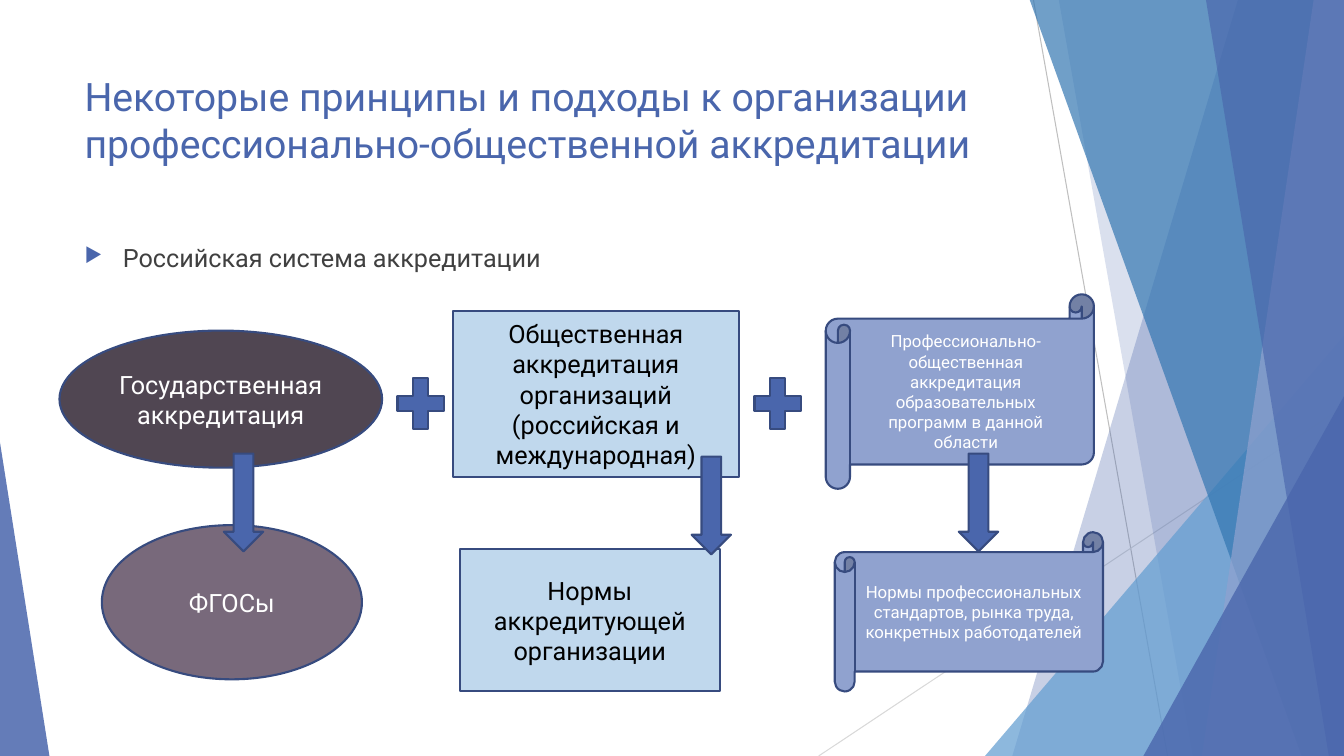
import pptx
import pptx.dml.color
import pptx.enum.shapes
import pptx.enum.text
import pptx.oxml.ns
import pptx.util
from lxml import etree

Inches = pptx.util.Inches
RGBColor = pptx.dml.color.RGBColor
Shape = pptx.enum.shapes.MSO_SHAPE
Align = pptx.enum.text.PP_ALIGN
Anchor = pptx.enum.text.MSO_ANCHOR
qn = pptx.oxml.ns.qn

WIDTH, HEIGHT = 13.33, 7.5
BLUE = RGBColor(0x4A, 0x66, 0xAC)
NAVY = RGBColor(0x37, 0x4B, 0x7F)
SKY = RGBColor(0x62, 0x9D, 0xD1)
TEAL = RGBColor(0x34, 0x77, 0xB2)
PERIWINKLE = RGBColor(0x90, 0xA2, 0xCF)
PALE_BLUE = RGBColor(0xC0, 0xD8, 0xED)
DARK_PLUM = RGBColor(0x50, 0x46, 0x52)
PLUM = RGBColor(0x78, 0x69, 0x7B)
GRAY = RGBColor(0xBF, 0xBF, 0xBF)
LIGHT_GRAY = RGBColor(0xD9, 0xD9, 0xD9)
TEXT_GRAY = RGBColor(0x40, 0x40, 0x40)
BLACK = RGBColor(0, 0, 0)
WHITE = RGBColor(0xFF, 0xFF, 0xFF)


class SlideBuilder:
    font = "Roboto"
    outline = NAVY
    outline_width = 1.5

    def __init__(self, slide):
        self.slide = slide
        self.shapes = slide.shapes

    def line(self, start, end, color):
        connector = self.shapes.add_connector(
            pptx.enum.shapes.MSO_CONNECTOR.STRAIGHT,
            *(Inches(value) for value in start + end))
        connector.line.color.rgb = color
        connector.line.width = pptx.util.Pt(0.75)
        etree.SubElement(connector._element.spPr, qn("a:effectLst"))

    def paint_facet(self, shape, color, opacity):
        shape.shadow.inherit = False
        shape.fill.solid()
        shape.fill.fore_color.rgb = color
        shape.line.fill.background()
        rgb = shape._element.spPr.find(qn("a:solidFill")).find(qn("a:srgbClr"))
        etree.SubElement(rgb, qn("a:alpha"), val=str(opacity * 1000))

    def band(self, top_x, bottom_x, color, opacity):
        """Facet between a slanted edge and the right side of the slide."""
        corners = [(top_x, -0.01), (WIDTH, -0.01), (WIDTH, HEIGHT), (bottom_x, HEIGHT)]
        points = [(Inches(x), Inches(y)) for x, y in corners]
        builder = self.shapes.build_freeform(*points[0])
        builder.add_line_segments(points[1:], close=True)
        self.paint_facet(builder.convert_to_shape(), color, opacity)

    def triangle(self, left, top, width, apex, color, opacity):
        """Facet standing on the bottom edge of the slide."""
        shape = self.shapes.add_shape(
            Shape.ISOSCELES_TRIANGLE, Inches(left), Inches(top),
            Inches(width), Inches(HEIGHT - top))
        shape.adjustments[0] = apex
        self.paint_facet(shape, color, opacity)

    def format_text(self, paragraph, size, color):
        for run in paragraph.runs:
            run.font.name = self.font
            run.font.size = pptx.util.Pt(size)
            run.font.color.rgb = color

    def text(self, box, text, size, color):
        shape = self.shapes.add_textbox(*(Inches(value) for value in box))
        shape.text_frame.word_wrap = True
        shape.text_frame.text = text
        paragraph = shape.text_frame.paragraphs[0]
        self.format_text(paragraph, size, color)
        return paragraph

    def bullet(self, box, text, size, color):
        paragraph = self.text(box, text, size, color)
        paragraph.space_before = pptx.util.Pt(10)
        properties = paragraph._p.get_or_add_pPr()
        properties.set("marL", str(Inches(0.38)))
        properties.set("indent", str(-Inches(0.38)))
        bullet_color = etree.SubElement(properties, qn("a:buClr"))
        etree.SubElement(bullet_color, qn("a:srgbClr"), val=str(BLUE))
        etree.SubElement(properties, qn("a:buSzPct"), val="80000")
        etree.SubElement(properties, qn("a:buChar"), char="▶")

    def figure(self, kind, box, fill):
        shape = self.shapes.add_shape(kind, *(Inches(value) for value in box))
        shape.shadow.inherit = False
        shape.fill.solid()
        shape.fill.fore_color.rgb = fill
        shape.line.color.rgb = self.outline
        shape.line.width = pptx.util.Pt(self.outline_width)
        return shape

    def block(self, kind, box, fill, text, size, color):
        text_frame = self.figure(kind, box, fill).text_frame
        text_frame.word_wrap = True
        text_frame.vertical_anchor = Anchor.MIDDLE
        text_frame.text = text
        paragraph = text_frame.paragraphs[0]
        paragraph.alignment = Align.CENTER
        self.format_text(paragraph, size, color)

    def down_arrow(self, left, top):
        self.figure(Shape.LEFT_ARROW, (left, top, 0.97, 0.39), BLUE).rotation = 270

    def plus(self, left, top):
        self.figure(Shape.MATH_PLUS, (left, top, 0.63, 0.69), BLUE)


def main():
    presentation = pptx.Presentation()
    presentation.slide_width = Inches(WIDTH)
    presentation.slide_height = Inches(HEIGHT)
    builder = SlideBuilder(presentation.slides.add_slide(presentation.slide_layouts[6]))

    # Background facets
    builder.line((10.25, 0), (11.58, HEIGHT), GRAY)
    builder.line((WIDTH, 4.03), (8.12, HEIGHT), LIGHT_GRAY)
    builder.band(12.28, 10.04, BLUE, 30)
    builder.band(10.5, 11.83, BLUE, 20)
    builder.triangle(9.77, 3.33, 3.56, 1, SKY, 72)
    builder.band(10.21, 12.91, TEAL, 70)
    builder.band(13.03, 11.92, PERIWINKLE, 70)
    builder.band(11.96, 13.18, BLUE, 65)
    builder.triangle(11.34, 3.93, 1.99, 1, BLUE, 80)
    builder.triangle(0, 4.39, 0.49, 0, BLUE, 85)

    # Title and bullet
    builder.text((0.74, 0.67, 9.4, 1.44),
                 "Некоторые принципы и подходы к организации "
                 "профессионально-общественной аккредитации", 28, BLUE)
    builder.bullet((0.74, 2.36, 9.4, 4.24), "Российская система аккредитации",
                   18, TEXT_GRAY)

    # Kinds of accreditation
    builder.block(Shape.OVAL, (0.59, 3.28, 3.2, 1.36), DARK_PLUM,
                  "Государственная аккредитация", 18, WHITE)
    builder.block(Shape.RECTANGLE, (4.49, 3.09, 2.84, 1.64), PALE_BLUE,
                  "Общественная аккредитация организаций "
                  "(российская и международная)", 18, BLACK)
    builder.block(Shape.HORIZONTAL_SCROLL, (8.19, 2.92, 2.66, 1.93), PERIWINKLE,
                  "Профессионально-общественная аккредитация "
                  "образовательных программ в данной области", 12, WHITE)

    # Norms behind each kind
    builder.block(Shape.OVAL, (1.01, 5.21, 2.58, 1.53), PLUM, "ФГОСы", 18, WHITE)
    builder.block(Shape.RECTANGLE, (4.56, 5.45, 2.58, 1.41), PALE_BLUE,
                  "Нормы аккредитующей организации", 18, BLACK)
    builder.block(Shape.HORIZONTAL_SCROLL, (8.28, 5.28, 2.66, 1.58), PERIWINKLE,
                  "Нормы профессиональных стандартов, рынка труда, "
                  "конкретных работодателей", 12, WHITE)

    # Arrows and plus signs
    for left, top in ((1.93, 4.79), (6.57, 4.82), (9.22, 4.79)):
        builder.down_arrow(left, top)
    for left in (3.86, 7.4):
        builder.plus(left, 3.66)

    presentation.save("out.pptx")


if __name__ == "__main__":
    main()
